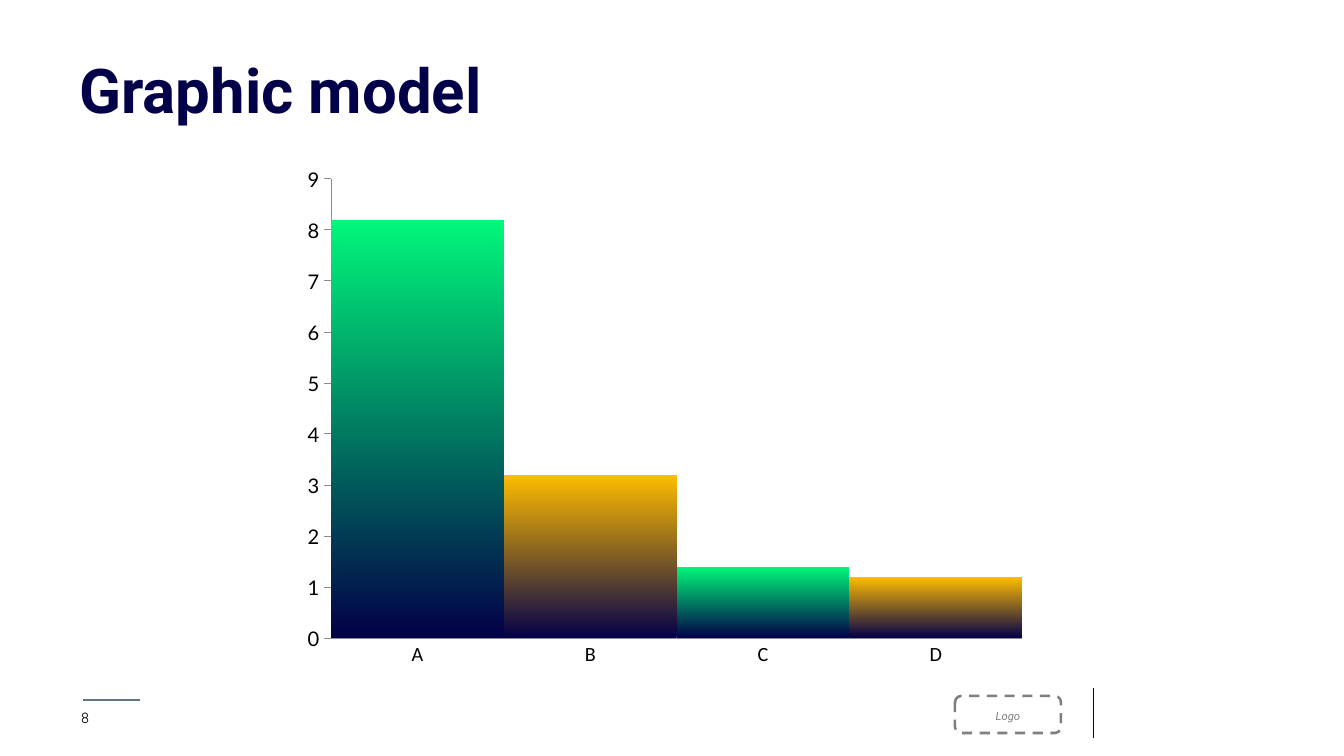
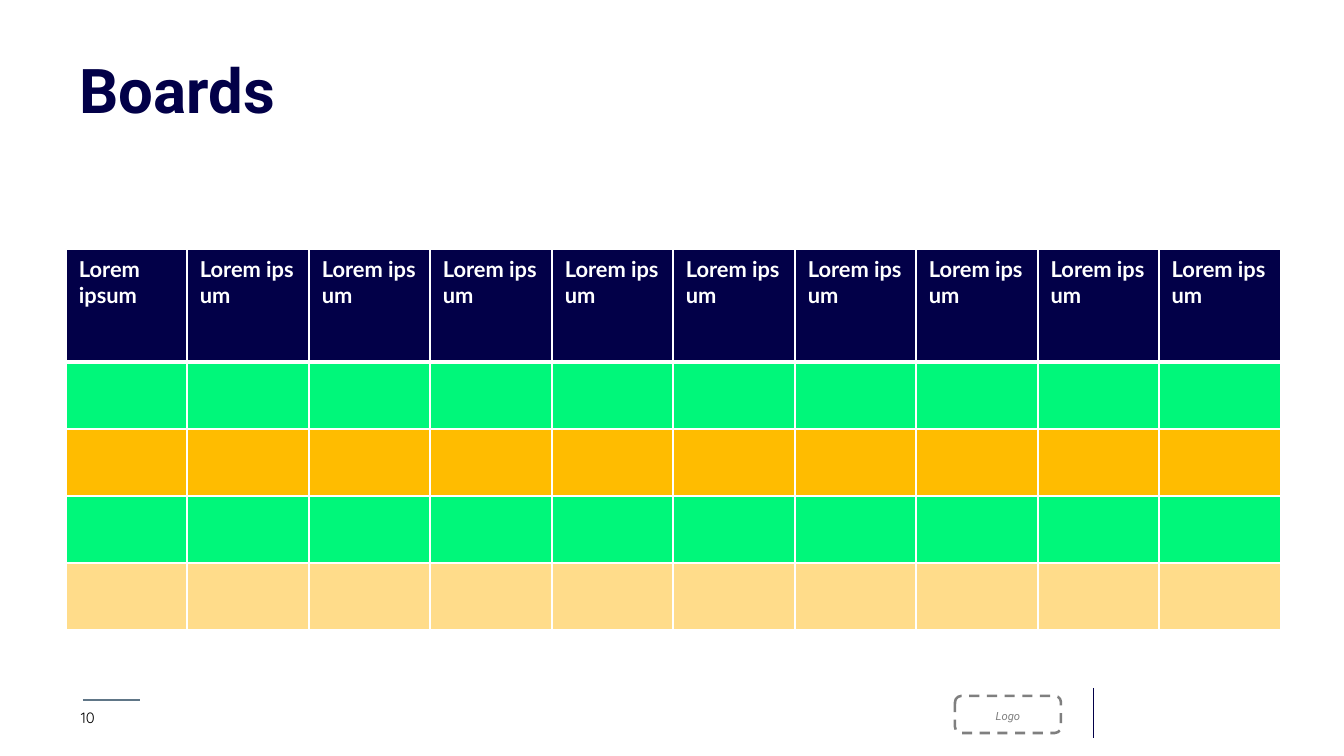
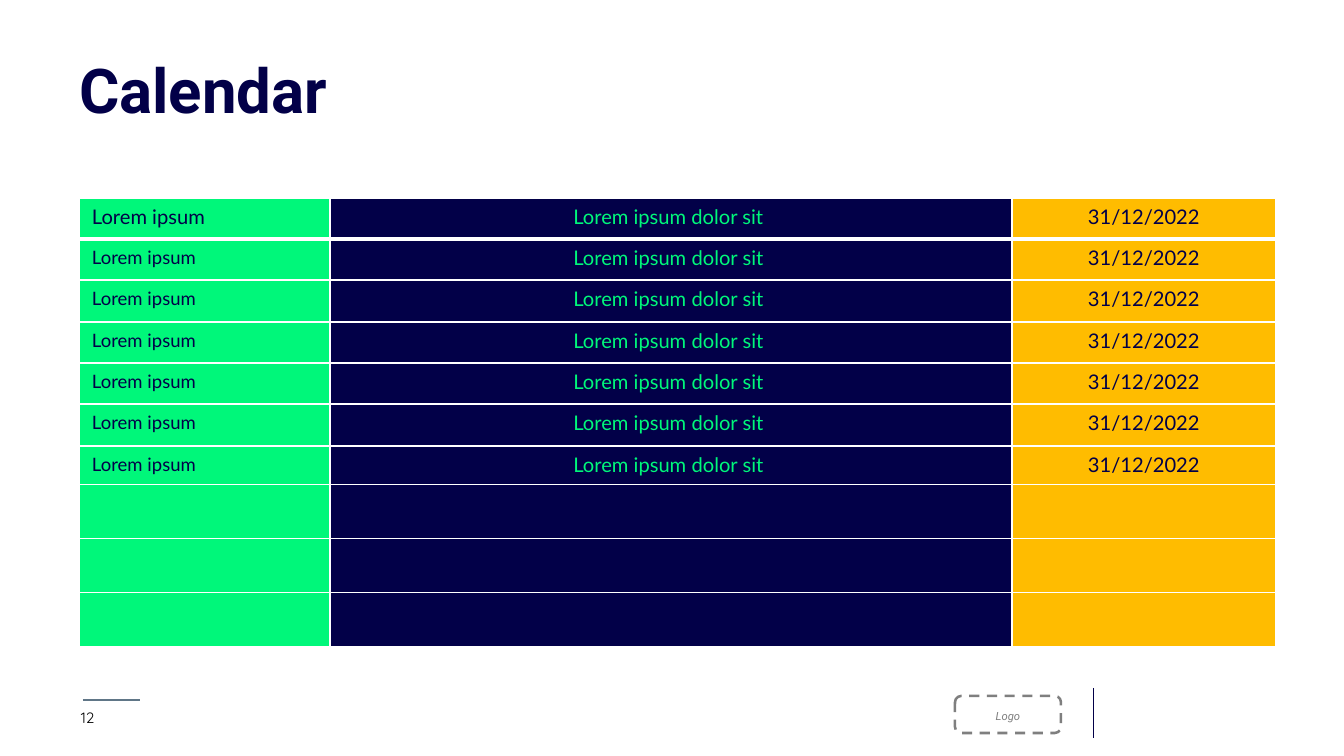
from dataclasses import dataclass

from lxml import etree
from pptx import Presentation
from pptx.chart.data import CategoryChartData
from pptx.dml.color import RGBColor
from pptx.enum.chart import XL_CHART_TYPE, XL_TICK_MARK
from pptx.enum.dml import MSO_LINE
from pptx.enum.shapes import MSO_CONNECTOR, MSO_SHAPE
from pptx.enum.text import MSO_ANCHOR, MSO_AUTO_SIZE, PP_ALIGN
from pptx.oxml.ns import qn
from pptx.util import Emu, Pt

COLUMNS = XL_CHART_TYPE.COLUMN_CLUSTERED
TICK_NONE, TICK_OUT = XL_TICK_MARK.NONE, XL_TICK_MARK.OUTSIDE
DASH = MSO_LINE.DASH
STRAIGHT = MSO_CONNECTOR.STRAIGHT
ROUNDED = MSO_SHAPE.ROUNDED_RECTANGLE
MIDDLE = MSO_ANCHOR.MIDDLE
FIXED_SIZE = MSO_AUTO_SIZE.NONE
LEFT, CENTER = PP_ALIGN.LEFT, PP_ALIGN.CENTER

PX_PER_INCH = 121
TITLE_ONLY = 5
NO_BREAK_SPACE = chr(160)


@dataclass(frozen=True)
class Theme:
    navy: str = "020048"
    green: str = "00F77A"
    amber: str = "FFBC00"
    pale_amber: str = "FFB400"
    white: str = "FFFFFF"
    black: str = "000000"
    slate: str = "607687"
    axis_grey: str = "8C8C8C"
    logo_line: str = "7F7F7F"
    logo_text: str = "808080"
    heading_font: str = "Roboto"
    body_font: str = "Lato"
    number_font: str = "Quicksand"
    label_font: str = "Calibri"
    title_size: float = 36.7
    header_size: float = 13
    body_size: float = 12
    small_size: float = 11
    number_size: float = 8.9
    logo_size: float = 6.7


THEME = Theme()


@dataclass(frozen=True)
class Cell:
    fill: str
    text: str = ""
    color: str = THEME.navy
    size: float = THEME.body_size
    bold: bool = False
    align: PP_ALIGN = LEFT
    opacity: int = 100


def px(length):
    return Emu(round(length * 914400 / PX_PER_INCH))


def rgb(color):
    return RGBColor.from_string(color)


def unbroken(text):
    return text.replace(" ", NO_BREAK_SPACE)


def style_font(font, name, size, color, bold=False, italic=False):
    font.name, font.size, font.color.rgb = name, Pt(size), rgb(color)
    font.bold, font.italic = bold, italic


def add_run(paragraph, text, *style, **emphasis):
    run = paragraph.add_run()
    run.text = text
    style_font(run.font, *style, **emphasis)


def set_cell_borders(cell, color, widths):
    """Draw the left, right, top and bottom borders, with widths in points."""
    properties = cell._tc.get_or_add_tcPr()
    for index, (side, width) in enumerate(zip("LRTB", widths)):
        border = etree.Element(qn(f"a:ln{side}"), w=str(Pt(width)))
        fill = etree.SubElement(border, qn("a:solidFill"))
        etree.SubElement(fill, qn("a:srgbClr"), val=color)
        properties.insert(index, border)


def set_plot_area(chart, **fractions):
    """Fix the inner plot area as fractions of the chart frame."""
    plot_area = chart._chartSpace.chart.plotArea
    for old_layout in plot_area.findall(qn("c:layout")):
        plot_area.remove(old_layout)
    layout = etree.Element(qn("c:layout"))
    manual = etree.SubElement(layout, qn("c:manualLayout"))
    settings = {"layoutTarget": "inner", "xMode": "edge", "yMode": "edge", **fractions}
    for name, value in settings.items():
        etree.SubElement(manual, qn(f"c:{name}"), val=str(value))
    plot_area.insert(0, layout)


class Deck:
    def __init__(self, theme):
        self.theme = theme
        self.presentation = Presentation()
        self.presentation.slide_width = px(1344)
        self.presentation.slide_height = px(756)
        self.slide = None

    def new_slide(self, title, number):
        layout = self.presentation.slide_layouts[TITLE_ONLY]
        self.slide = self.presentation.slides.add_slide(layout)
        self.title(title)
        self.footer(number)

    def title(self, text):
        t = self.theme
        heading = self.slide.shapes.title
        heading.left, heading.top, heading.width, heading.height = map(px, (67, 31, 577, 126))
        frame = heading.text_frame
        frame.word_wrap, frame.auto_size = True, FIXED_SIZE
        frame.vertical_anchor = MIDDLE
        paragraph = frame.paragraphs[0]
        paragraph.alignment, paragraph.line_spacing = LEFT, 0.9
        add_run(paragraph, text, t.heading_font, t.title_size, t.navy, bold=True)

    def footer(self, number):
        t = self.theme
        number_box = self.slide.shapes.add_textbox(*map(px, (69, 703, 57, 30)))
        number_box.text_frame.word_wrap = True
        add_run(number_box.text_frame.paragraphs[0], str(number),
                t.number_font, t.number_size, t.black)
        self.line(83, 700, 140, 700, t.slate, 0.75)
        self.logo_frame()
        self.line(1093, 688, 1093, 738, t.navy, 0.5)

    def logo_frame(self):
        t = self.theme
        frame = self.slide.shapes.add_shape(ROUNDED, *map(px, (955, 696, 106, 37)))
        frame.shadow.inherit = False
        frame.fill.background()
        frame.line.color.rgb = rgb(t.logo_line)
        frame.line.width, frame.line.dash_style = Pt(1.5), DASH
        label = frame.text_frame
        label.vertical_anchor = MIDDLE
        label.margin_top, label.margin_bottom = px(8), px(4)
        paragraph = label.paragraphs[0]
        paragraph.alignment = CENTER
        add_run(paragraph, "Logo", t.heading_font, t.logo_size, t.logo_text, italic=True)

    def line(self, x1, y1, x2, y2, color, width):
        rule = self.slide.shapes.add_connector(STRAIGHT, *map(px, (x1, y1, x2, y2)))
        rule.line.color.rgb, rule.line.width = rgb(color), Pt(width)
        etree.SubElement(rule._element.spPr, qn("a:effectLst"))

    def column_chart(self, box, categories, values, top_colors):
        """Draw touching columns that fade from navy up to the given colours."""
        t = self.theme
        data = CategoryChartData()
        data.categories = categories
        data.add_series("Series 1", values)
        chart = self.slide.shapes.add_chart(COLUMNS, *map(px, box), data).chart
        chart.has_legend = chart.has_title = False
        style_font(chart.font, t.label_font, t.body_size, t.black)
        set_plot_area(chart, x=0.05, y=0.04, w=0.93, h=0.88)

        axes = ((chart.category_axis, TICK_NONE, t.label_font),
                (chart.value_axis, TICK_OUT, t.body_font))
        for axis, tick, font in axes:
            axis.has_major_gridlines = False
            axis.major_tick_mark, axis.minor_tick_mark = tick, TICK_NONE
            axis.format.line.color.rgb = rgb(t.axis_grey)
            axis.format.line.width = Pt(0.5)
            style_font(axis.tick_labels.font, font, t.body_size, t.black)
        scale = chart.value_axis
        scale.minimum_scale, scale.maximum_scale, scale.major_unit = 0, 9, 1

        plot = chart.plots[0]
        plot.gap_width, plot.vary_by_categories = 0, False
        for index, color in enumerate(top_colors):
            fill = plot.series[0].points[index].format.fill
            fill.gradient()
            fill.gradient_angle = 90
            for stop, position, shade in zip(fill.gradient_stops, (0, 1), (t.navy, color)):
                stop.position, stop.color.rgb = position, rgb(shade)

    def table(self, left, top, column_widths, row_heights, rows):
        box = (left, top, sum(column_widths), sum(row_heights))
        grid = self.slide.shapes.add_table(
            len(rows), len(column_widths), *map(px, box)).table
        grid.first_row = grid.horz_banding = False
        for column, width in zip(grid.columns, column_widths):
            column.width = px(width)
        for row, height in zip(grid.rows, row_heights):
            row.height = px(height)
        for r, row in enumerate(rows):
            for c, content in enumerate(row):
                borders = (1, 1, 3 if r == 1 else 1, 3 if r == 0 else 1)
                self.table_cell(grid.cell(r, c), content, borders)

    def table_cell(self, cell, content, borders):
        cell.margin_left = cell.margin_right = px(13)
        cell.margin_top = cell.margin_bottom = px(7)
        cell.fill.solid()
        cell.fill.fore_color.rgb = rgb(content.fill)
        if content.opacity < 100:
            color = cell._tc.tcPr.find(f".//{qn('a:srgbClr')}")
            etree.SubElement(color, qn("a:alpha"), val=str(content.opacity * 1000))
        set_cell_borders(cell, self.theme.white, borders)
        if content.text:
            paragraph = cell.text_frame.paragraphs[0]
            paragraph.alignment = content.align
            add_run(paragraph, content.text, self.theme.body_font,
                    content.size, content.color, bold=content.bold)


def graphic_slide(deck):
    t = deck.theme
    deck.new_slide("Graphic model", 8)
    deck.column_chart((294, 158, 743, 522), "ABCD", (8.2, 3.2, 1.4, 1.2),
                      (t.green, t.amber) * 2)


def boards_slide(deck):
    t = deck.theme
    deck.new_slide("Boards", 10)
    headings = ["Lorem ipsum"] + [unbroken("Lorem ipsum")] * 9
    header = [Cell(t.navy, heading, t.white, t.header_size, bold=True)
              for heading in headings]
    bands = [Cell(t.green), Cell(t.amber), Cell(t.green), Cell(t.pale_amber, opacity=46)]
    rows = [header] + [[band] * len(headings) for band in bands]
    deck.table(66, 249, [121, 122] * 5, [113] + [67] * len(bands), rows)


def calendar_slide(deck):
    t = deck.theme
    deck.new_slide("Calendar", 12)

    def entry(task, detail, task_size):
        return [Cell(t.green, task, size=task_size),
                Cell(t.navy, detail + NO_BREAK_SPACE, t.green, align=CENTER),
                Cell(t.amber, "31/12/2022", align=CENTER)]

    task, detail = "Lorem ipsum", "Lorem ipsum dolor sit"
    first = entry(task, detail, t.body_size)
    later = entry(unbroken(task), unbroken(detail), t.small_size)
    unused = [Cell(t.green), Cell(t.navy), Cell(t.amber)]
    deck.table(79, 198, [251, 682, 264], [41, 41, 42] * 2 + [39] + [54] * 3,
               [first] + [later] * 6 + [unused] * 3)


def main():
    deck = Deck(THEME)
    graphic_slide(deck)
    boards_slide(deck)
    calendar_slide(deck)
    deck.presentation.save("out.pptx")


if __name__ == "__main__":
    main()
